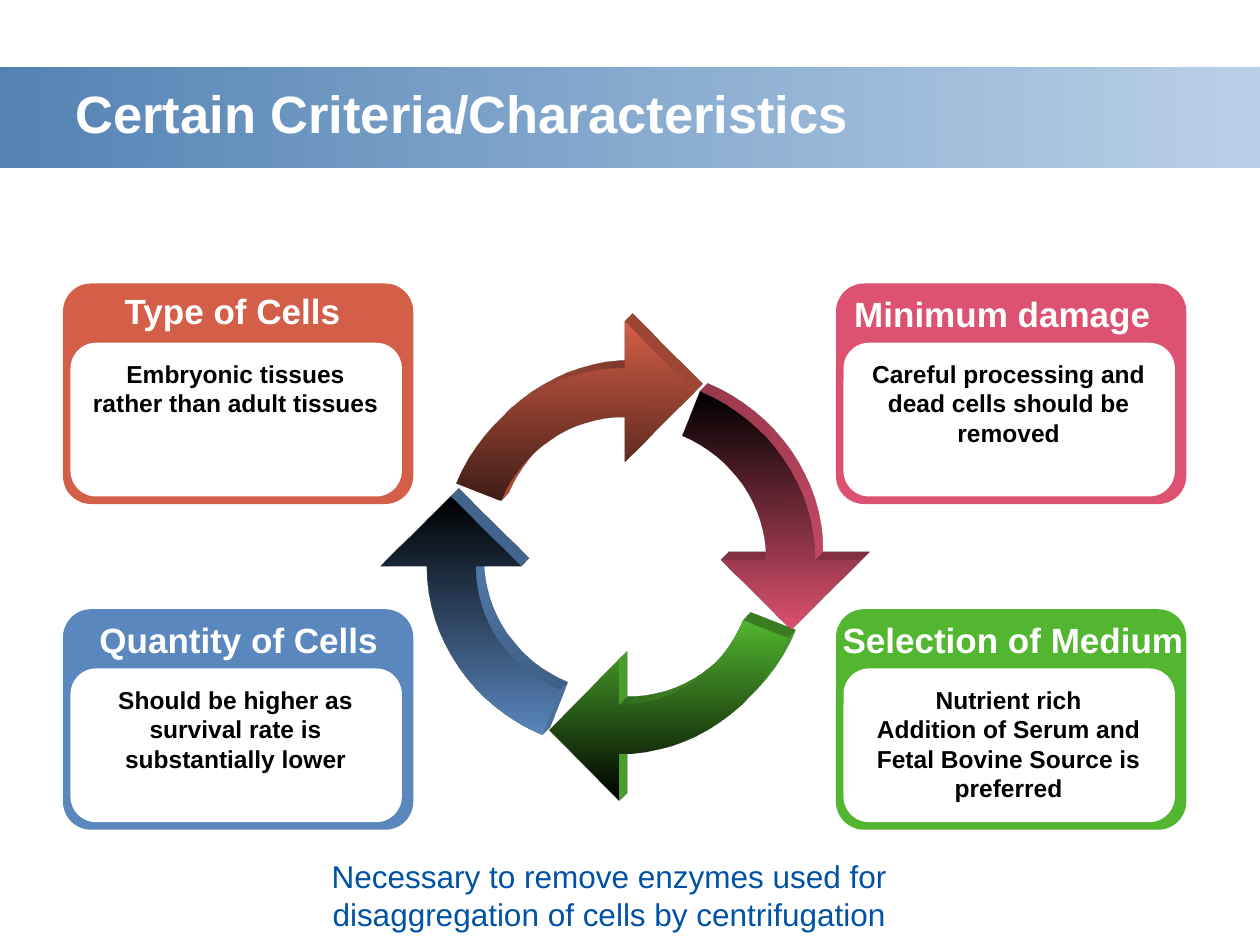
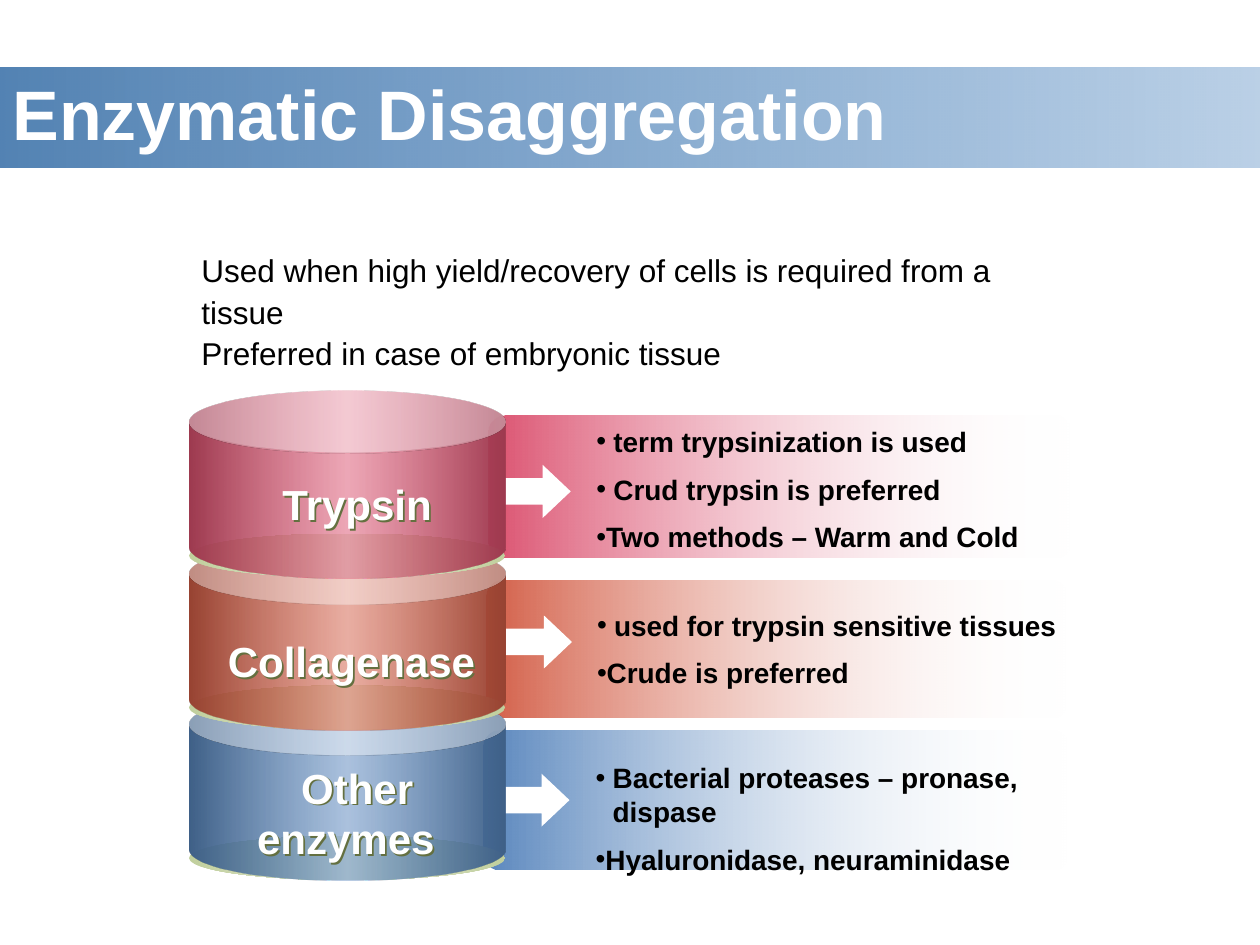
from dataclasses import dataclass
from typing import NamedTuple

from lxml.etree import SubElement
from pptx import Presentation
from pptx.dml.color import RGBColor
from pptx.enum.shapes import MSO_SHAPE
from pptx.enum.text import MSO_ANCHOR, PP_ALIGN
from pptx.oxml.ns import qn
from pptx.util import Inches, Pt

# The page is a grid of 100 columns by 75 rows of square cells.
COLUMNS, ROWS = 100, 75
CELL = Inches(0.1)

FONT = "Arial"
WHITE = RGBColor(0xFF, 0xFF, 0xFF)
BLACK = RGBColor(0x00, 0x00, 0x00)
NAVY = RGBColor(0x00, 0x52, 0xA4)
BLUE = RGBColor(0x5A, 0x87, 0xBE)
RED = RGBColor(0xD4, 0x5F, 0x48)
RED_DEEP = RGBColor(0x40, 0x1D, 0x16)
PINK = RGBColor(0xDC, 0x52, 0x70)
GREEN = RGBColor(0x53, 0xB6, 0x30)
RIM = RGBColor(0xC1, 0xCF, 0x9D)
RIM_LIGHT = RGBColor(0xE7, 0xEC, 0xDC)
LABEL_SHADOW = RGBColor(0x64, 0x70, 0x40)


class Area(NamedTuple):
    column: float
    row: float
    columns: float
    rows: float

    def emu(self) -> list[int]:
        return [round(cells * CELL) for cells in self]


class Stop(NamedTuple):
    position: int
    color: RGBColor
    opacity: int = 100
    shade: int = 100


class Line(NamedTuple):
    text: str
    bullet_gap: float = 0
    first_indent: float = 0


@dataclass
class Style:
    size: float
    color: RGBColor = BLACK
    bold: bool = True
    align: PP_ALIGN = PP_ALIGN.LEFT
    anchor: MSO_ANCHOR = MSO_ANCHOR.TOP
    line_spacing: float = 1.0
    gap: float = 0
    shadow: bool = False


@dataclass
class Card:
    column: float
    row: float
    color: RGBColor
    heading: str
    heading_area: Area
    body: list[str]


@dataclass
class CycleArrow:
    quarter_turns: int
    center: tuple[float, float]
    dark: RGBColor
    color: RGBColor
    angle: int


@dataclass
class Enzyme:
    name: Line
    label_row: float
    label_rows: float
    can_row: float
    color: RGBColor
    band: Area
    arrow: tuple[float, float]
    facts_area: Area
    facts: list[Line]


CARD_HEADING = Style(20, WHITE, align=PP_ALIGN.CENTER)
CARD_BODY = Style(14, align=PP_ALIGN.CENTER)
FACTS = Style(16, gap=8)
LABEL = Style(24, WHITE, align=PP_ALIGN.CENTER, shadow=True)

LEFT, RIGHT, TOP, BOTTOM = 5, 66.35, 22.5, 48.35
CARDS = [
    Card(LEFT, BOTTOM, BLUE, "Quantity of Cells", Area(6, 48.6, 25.9, 4.4),
         ["Should be higher as survival rate is substantially lower"]),
    Card(LEFT, TOP, RED, "Type of Cells", Area(7.5, 22.5, 21.9, 4.4),
         ["Embryonic tissues rather than adult tissues"]),
    Card(RIGHT, BOTTOM, GREEN, "Selection of Medium", Area(65, 48.6, 30.8, 4.4),
         ["Nutrient rich", "Addition of Serum and Fetal Bovine Source is preferred"]),
    Card(RIGHT, TOP, PINK, "Minimum damage", Area(66.35, 22.75, 26.4, 4.4),
         ["Careful processing and dead cells should be removed"]),
]

# Curved arrow around the centre of the cycle, in cells.
# Points 1-3 and 5-7 each describe one cubic curve.
ARROW_OUTLINE = [
    (0, -10.75), (-4.3, -10.75), (-8.1, -8.15), (-9.8, -4.1),
    (-13.35, -5.5), (-11.05, -11.05), (-5.75, -14.65), (0, -14.65),
    (0, -18.35), (5.55, -12.75), (0, -7.15),
]
CURVE_STARTS = (0, 4)
CYCLE = [
    CycleArrow(2, (49.15, 45.15), BLACK, GREEN, 270),
    CycleArrow(3, (48.55, 44.95), BLACK, BLUE, 90),
    CycleArrow(0, (49.55, 43.85), RED_DEEP, RED, 270),
    CycleArrow(1, (50.05, 44.45), BLACK, PINK, 90),
]

WIDE, TIGHT = 1.35, 0.73
ENZYMES = [
    Enzyme(Line("Other enzymes", first_indent=1.8), 60, 9.1, 55, BLUE,
           Area(38.4, 58, 46.4, 11), (39.9, 61.4), Area(46.3, 59.9, 38.4, 10.4),
           [Line("Bacterial proteases – pronase, dispase", WIDE),
            Line("Hyaluronidase, neuraminidase", TIGHT)]),
    Enzyme(Line("Collagenase", first_indent=0.9), 49.95, 5, 43.05, RED,
           Area(38.6, 46.05, 46.1, 10.9), (40.1, 48.85), Area(46.4, 47.8, 39.4, 7.7),
           [Line("used for trypsin sensitive tissues", WIDE),
            Line("Crude is preferred", TIGHT)]),
    Enzyme(Line("Trypsin", first_indent=1.8), 37.5, 5, 31, PINK,
           Area(38.8, 33, 46.2, 11.25), (40, 36.9), Area(46.35, 33.2, 39.2, 11.8),
           [Line("term trypsinization is used", WIDE),
            Line("Crud trypsin is preferred", WIDE),
            Line("Two methods – Warm and Cold", TIGHT)]),
]


def paint(shape, fill: RGBColor | list[Stop], angle: int = 0) -> None:
    """Fill with one colour, or with a linear gradient, and drop line and shadow."""
    shape.shadow.inherit = False
    shape.line.fill.background()
    if isinstance(fill, RGBColor):
        shape.fill.solid()
        shape.fill.fore_color.rgb = fill
        return
    shape.fill.gradient()
    gradient = shape._element.spPr.find(qn("a:gradFill"))
    for child in list(gradient):
        gradient.remove(child)
    stops = SubElement(gradient, qn("a:gsLst"))
    for stop in fill:
        mark = SubElement(stops, qn("a:gs"), pos=str(stop.position * 1000))
        color = SubElement(mark, qn("a:srgbClr"), val=str(stop.color))
        for tag, share in (("a:shade", stop.shade), ("a:alpha", stop.opacity)):
            if share < 100:
                SubElement(color, qn(tag), val=str(share * 1000))
    SubElement(gradient, qn("a:lin"), ang=str(angle * 60000), scaled="0")


def add_block(page, kind: MSO_SHAPE, area: Area, fill: RGBColor | list[Stop],
              adjustments: tuple[float, ...] = ()) -> None:
    shape = page.shapes.add_shape(kind, *area.emu())
    for index, value in enumerate(adjustments):
        shape.adjustments[index] = value
    paint(shape, fill)


def indent(para, line: Line) -> None:
    properties = para._p.get_or_add_pPr()
    if line.bullet_gap:
        gap = round(line.bullet_gap * CELL)
        properties.set("marL", str(gap))
        properties.set("indent", str(-gap))
        SubElement(properties, qn("a:buFont"), typeface=FONT)
        SubElement(properties, qn("a:buChar"), char="•")
    elif line.first_indent:
        properties.set("marL", "0")
        properties.set("indent", str(round(line.first_indent * CELL)))


def add_text_shadow(box) -> None:
    """Give an unfilled box a shadow, which its letters then cast."""
    effects = SubElement(box._element.spPr, qn("a:effectLst"))
    shadow = SubElement(effects, qn("a:outerShdw"), dist="17961", dir="2700000",
                        algn="ctr", rotWithShape="0")
    SubElement(shadow, qn("a:srgbClr"), val=str(LABEL_SHADOW))


def add_text(page, area: Area, lines: list[Line], style: Style) -> None:
    box = page.shapes.add_textbox(*area.emu())
    if style.shadow:
        add_text_shadow(box)
    frame = box.text_frame
    frame.word_wrap = True
    frame.vertical_anchor = style.anchor
    for index, line in enumerate(lines):
        para = frame.add_paragraph() if index else frame.paragraphs[0]
        para.alignment = style.align
        para.line_spacing = style.line_spacing
        if index and style.gap:
            para.space_before = Pt(style.gap)
        indent(para, line)
        span = para.add_run()
        span.text = line.text
        formats = {"name": FONT, "size": Pt(style.size), "bold": style.bold}
        for name, value in formats.items():
            setattr(span.font, name, value)
        span.font.color.rgb = style.color


def add_page(deck, title: str, title_area: Area, title_size: float):
    """Add a blank page with the shared title band."""
    page = deck.slides.add_slide(deck.slide_layouts[6])
    add_block(page, MSO_SHAPE.RECTANGLE, Area(0, 5.33, COLUMNS, 8),
              [Stop(0, NAVY, 68, 75), Stop(100, NAVY, 27)])
    add_text(page, title_area, [Line(title)],
             Style(title_size, WHITE, anchor=MSO_ANCHOR.MIDDLE))
    return page


def add_card(page, card: Card) -> None:
    add_block(page, MSO_SHAPE.ROUNDED_RECTANGLE,
              Area(card.column, card.row, 27.8, 17.5), card.color, (0.127,))
    add_block(page, MSO_SHAPE.ROUNDED_RECTANGLE,
              Area(card.column + 0.6, card.row + 4.7, 26.3, 12.2), WHITE, (0.167,))
    add_text(page, card.heading_area, [Line(card.heading)], CARD_HEADING)
    add_text(page, Area(card.column + 1.05, card.row + 5.5, 25.3, 10.4),
             [Line(text) for text in card.body], CARD_BODY)


def bend(shape) -> None:
    """Turn the three straight steps after each curve start into one cubic curve."""
    steps = list(shape._element.iter(qn("a:lnTo")))
    for start in CURVE_STARTS:
        first, *others = steps[start:start + 3]
        curve = first.makeelement(qn("a:cubicBezTo"))
        first.addprevious(curve)
        for step in (first, *others):
            curve.append(step[0])
            step.getparent().remove(step)


def extrude(shape, color: RGBColor) -> None:
    properties = shape._element.spPr
    scene = SubElement(properties, qn("a:scene3d"))
    SubElement(scene, qn("a:camera"), prst="legacyObliqueTopRight")
    SubElement(scene, qn("a:lightRig"), rig="legacyFlat3", dir="b")
    solid = SubElement(properties, qn("a:sp3d"), extrusionH="163500",
                       prstMaterial="legacyMatte")
    side = SubElement(solid, qn("a:extrusionClr"))
    SubElement(side, qn("a:srgbClr"), val=str(color))


def add_cycle_arrow(page, arrow: CycleArrow) -> None:
    outline = ARROW_OUTLINE
    for _ in range(arrow.quarter_turns):
        outline = [(-y, x) for x, y in outline]
    points = [(round((arrow.center[0] + x) * CELL), round((arrow.center[1] + y) * CELL))
              for x, y in outline]
    builder = page.shapes.build_freeform(*points[0])
    builder.add_line_segments(points[1:], close=True)
    shape = builder.convert_to_shape()
    bend(shape)
    paint(shape, [Stop(0, arrow.dark), Stop(100, arrow.color)], arrow.angle)
    extrude(shape, arrow.color)


def add_enzyme_can(page, enzyme: Enzyme) -> None:
    add_block(page, MSO_SHAPE.OVAL, Area(15, enzyme.can_row + 11.35, 25.1, 3.5),
              [Stop(0, RIM), Stop(50, RIM_LIGHT), Stop(100, RIM)])
    add_block(page, MSO_SHAPE.CAN, Area(15, enzyme.can_row, 25.1, 14.9),
              [Stop(0, enzyme.color, shade=47), Stop(50, enzyme.color, 50),
               Stop(100, enzyme.color, shade=47)], (0.332,))


def build_criteria_page(deck) -> None:
    page = add_page(deck, "Certain Criteria/Characteristics", Area(5, 2.7, 65, 12.5), 30)
    for card in CARDS:
        add_card(page, card)
    for arrow in CYCLE:
        add_cycle_arrow(page, arrow)
    add_text(page, Area(20, 67.5, 56.7, 7.1),
             [Line("Necessary to remove enzymes used for disaggregation of cells by centrifugation")],
             Style(18, NAVY, bold=False, align=PP_ALIGN.CENTER))


def build_enzymes_page(deck) -> None:
    page = add_page(deck, "Enzymatic Disaggregation", Area(0, 2.7, 75.8, 12.5), 40)
    for enzyme in ENZYMES:
        add_block(page, MSO_SHAPE.ROUNDED_RECTANGLE, enzyme.band,
                  [Stop(0, enzyme.color), Stop(100, WHITE, 0)], (0.115,))
        add_text(page, enzyme.facts_area, enzyme.facts, FACTS)
        add_block(page, MSO_SHAPE.RIGHT_ARROW, Area(*enzyme.arrow, 5.3, 4.2), WHITE, (0.5, 0.528))
    add_text(page, Area(15, 19.15, 66.7, 11),
             [Line("Used when high yield/recovery of cells is required from a tissue"),
              Line("Preferred in case of embryonic tissue")],
             Style(18, bold=False, line_spacing=1.1))
    for enzyme in ENZYMES:
        add_enzyme_can(page, enzyme)
    for enzyme in ENZYMES:
        add_text(page, Area(15.8, enzyme.label_row, 23.3, enzyme.label_rows),
                 [enzyme.name], LABEL)


def main() -> None:
    deck = Presentation()
    deck.slide_width, deck.slide_height = COLUMNS * CELL, ROWS * CELL
    build_criteria_page(deck)
    build_enzymes_page(deck)
    deck.save("out.pptx")


if __name__ == "__main__":
    main()
